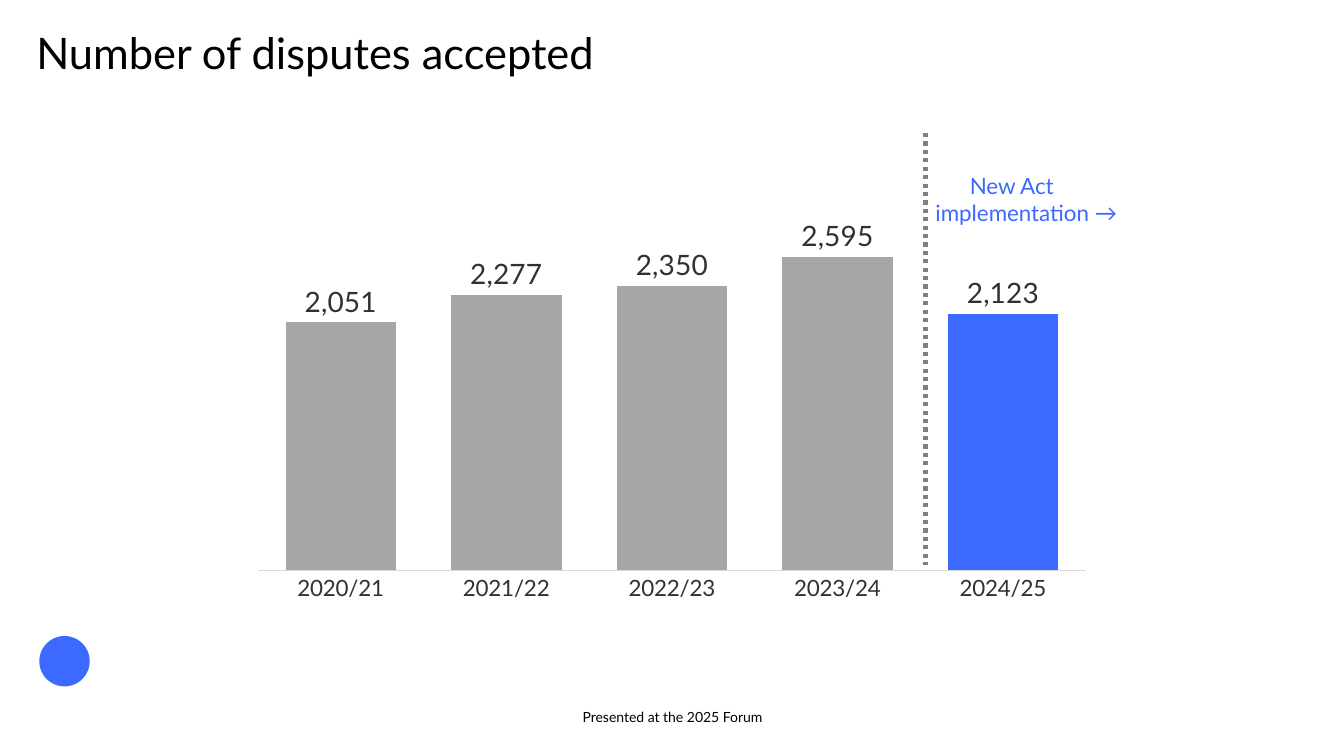
import pptx
import pptx.chart.data
import pptx.dml.color
import pptx.enum.chart
import pptx.enum.dml
import pptx.enum.shapes
import pptx.enum.text
import pptx.oxml
import pptx.oxml.ns
import pptx.util
from dataclasses import dataclass

Inches, Pt = pptx.util.Inches, pptx.util.Pt

TITLE = "Number of disputes accepted"
FOOTER = "Presented at the 2025 Forum"
# (text, left indent in inches)
ACT_NOTE = [("New Act", 0.34), ("implementation →", 0)]
DISPUTES = {
    "2020/21": 2051,
    "2021/22": 2277,
    "2022/23": 2350,
    "2023/24": 2595,
    "2024/25": 2123,
}
NEW_ACT_YEAR = "2024/25"
AXIS_MAXIMUM = 3000
NUMBER_FORMAT = "#,##0"

# left, top, width, height in inches
TITLE_AREA = (0.36, 0.32, 8.15, 1.35)
FOOTER_AREA = (4.42, 7, 4.5, 0.2)
CHART_AREA = (2.38, 1.99, 8.57, 4.05)
PLOT_AREA = (2.56, 2.06, 8.21, 3.6)
NOTE_AREA = (9.18, 1.66, 2.68, 0.64)
EMBLEM_AREA = (0.39, 6.31, 0.5, 0.5)
DIVIDER_X, DIVIDER_TOP, DIVIDER_BOTTOM = 9.18, 1.32, 5.61


def rgb(code):
    return pptx.dml.color.RGBColor.from_string(code)


@dataclass(frozen=True)
class Theme:
    font: str = "Lato"
    black = rgb("000000")
    ink = rgb("313131")
    accent = rgb("3C69FF")
    bar = rgb("A6A6A6")
    axis = rgb("D9D9D9")
    divider = rgb("808080")
    title_size = Pt(31)
    value_size = Pt(20)
    body_size = Pt(16)
    small_size = Pt(10)


THEME = Theme()


def style(font, size, color):
    font.name, font.size, font.color.rgb = THEME.font, size, color


def place(shape, area):
    shape.left, shape.top, shape.width, shape.height = map(Inches, area)


def clear_margins(frame):
    frame.margin_left = frame.margin_right = frame.margin_top = frame.margin_bottom = 0


def add_title(slide):
    title = slide.shapes.title
    place(title, TITLE_AREA)
    frame = title.text_frame
    clear_margins(frame)
    frame.auto_size = pptx.enum.text.MSO_AUTO_SIZE.NONE
    frame.vertical_anchor = pptx.enum.text.MSO_ANCHOR.TOP
    frame.text = TITLE
    para = frame.paragraphs[0]
    para.alignment = pptx.enum.text.PP_ALIGN.LEFT
    para.line_spacing = 0.9
    style(para.font, THEME.title_size, THEME.black)


def add_footer(slide):
    frame = slide.shapes.add_textbox(*map(Inches, FOOTER_AREA)).text_frame
    frame.word_wrap = True
    clear_margins(frame)
    frame.vertical_anchor = pptx.enum.text.MSO_ANCHOR.BOTTOM
    frame.text = FOOTER
    para = frame.paragraphs[0]
    para.alignment = pptx.enum.text.PP_ALIGN.CENTER
    style(para.font, THEME.small_size, THEME.black)


def fix_plot_area(chart):
    """Pin the inner plot area to PLOT_AREA, as fractions of the chart frame."""
    left, top, width, height = CHART_AREA
    plot_left, plot_top, plot_width, plot_height = PLOT_AREA
    fractions = {
        "x": (plot_left - left) / width,
        "y": (plot_top - top) / height,
        "w": plot_width / width,
        "h": plot_height / height,
    }
    modes = '<c:xMode val="edge"/><c:yMode val="edge"/>'
    sizes = "".join(f'<c:{key} val="{value:.4f}"/>' for key, value in fractions.items())
    layout = pptx.oxml.parse_xml(
        f'<c:layout {pptx.oxml.ns.nsdecls("c")}><c:manualLayout>'
        f'<c:layoutTarget val="inner"/>{modes}{sizes}</c:manualLayout></c:layout>'
    )
    plot_area = chart.plots[0]._element.getparent()
    for old_layout in plot_area.findall(pptx.oxml.ns.qn("c:layout")):
        plot_area.remove(old_layout)
    plot_area.insert(0, layout)


def add_disputes_chart(slide):
    data = pptx.chart.data.CategoryChartData(number_format=NUMBER_FORMAT)
    data.categories = list(DISPUTES)
    data.add_series("Series 1", list(DISPUTES.values()))
    chart = slide.shapes.add_chart(
        pptx.enum.chart.XL_CHART_TYPE.COLUMN_CLUSTERED, *map(Inches, CHART_AREA), data
    ).chart
    chart.has_legend = chart.has_title = False
    style(chart.font, THEME.small_size, THEME.black)
    fix_plot_area(chart)

    years = chart.category_axis
    years.major_tick_mark = pptx.enum.chart.XL_TICK_MARK.NONE
    years.format.line.color.rgb = THEME.axis
    years.format.line.width = Pt(0.75)
    style(years.tick_labels.font, THEME.body_size, THEME.ink)

    counts = chart.value_axis
    counts.minimum_scale, counts.maximum_scale = 0, AXIS_MAXIMUM
    counts.has_major_gridlines = False
    counts.visible = False

    plot = chart.plots[0]
    plot.gap_width = 50
    plot.vary_by_categories = False
    series = plot.series[0]
    new_act_bar = series.points[list(DISPUTES).index(NEW_ACT_YEAR)]
    for bars, color in ((series, THEME.bar), (new_act_bar, THEME.accent)):
        bars.format.fill.solid()
        bars.format.fill.fore_color.rgb = color

    labels = series.data_labels
    labels.show_value = True
    labels.number_format, labels.number_format_is_linked = NUMBER_FORMAT, False
    labels.position = pptx.enum.chart.XL_LABEL_POSITION.OUTSIDE_END
    style(labels.font, THEME.value_size, THEME.ink)


def add_divider(slide):
    line = slide.shapes.add_connector(
        pptx.enum.shapes.MSO_CONNECTOR.STRAIGHT,
        *map(Inches, (DIVIDER_X, DIVIDER_TOP, DIVIDER_X, DIVIDER_BOTTOM)),
    )
    line.line.color.rgb = THEME.divider
    line.line.width = Pt(3)
    line.line.dash_style = pptx.enum.dml.MSO_LINE.ROUND_DOT
    properties = line._element.spPr
    properties.append(pptx.oxml.parse_xml(f'<a:effectLst {pptx.oxml.ns.nsdecls("a")}/>'))


def add_act_note(slide):
    frame = slide.shapes.add_textbox(*map(Inches, NOTE_AREA)).text_frame
    frame.word_wrap = True
    frame.text = "\n".join(text for text, _ in ACT_NOTE)
    for para, (_, indent) in zip(frame.paragraphs, ACT_NOTE):
        style(para.font, THEME.body_size, THEME.accent)
        para._p.get_or_add_pPr().set("marL", str(Inches(indent)))


def add_emblem(slide):
    emblem = slide.shapes.add_shape(
        pptx.enum.shapes.MSO_SHAPE.OVAL, *map(Inches, EMBLEM_AREA)
    )
    emblem.shadow.inherit = False
    emblem.fill.solid()
    emblem.fill.fore_color.rgb = THEME.accent
    emblem.line.fill.background()


def main():
    deck = pptx.Presentation()
    deck.slide_width, deck.slide_height = Inches(13.33), Inches(7.5)
    slide = deck.slides.add_slide(deck.slide_layouts.get_by_name("Title Only"))
    for add_part in (add_emblem, add_title, add_footer, add_disputes_chart,
                     add_divider, add_act_note):
        add_part(slide)
    deck.save("out.pptx")


if __name__ == "__main__":
    main()
